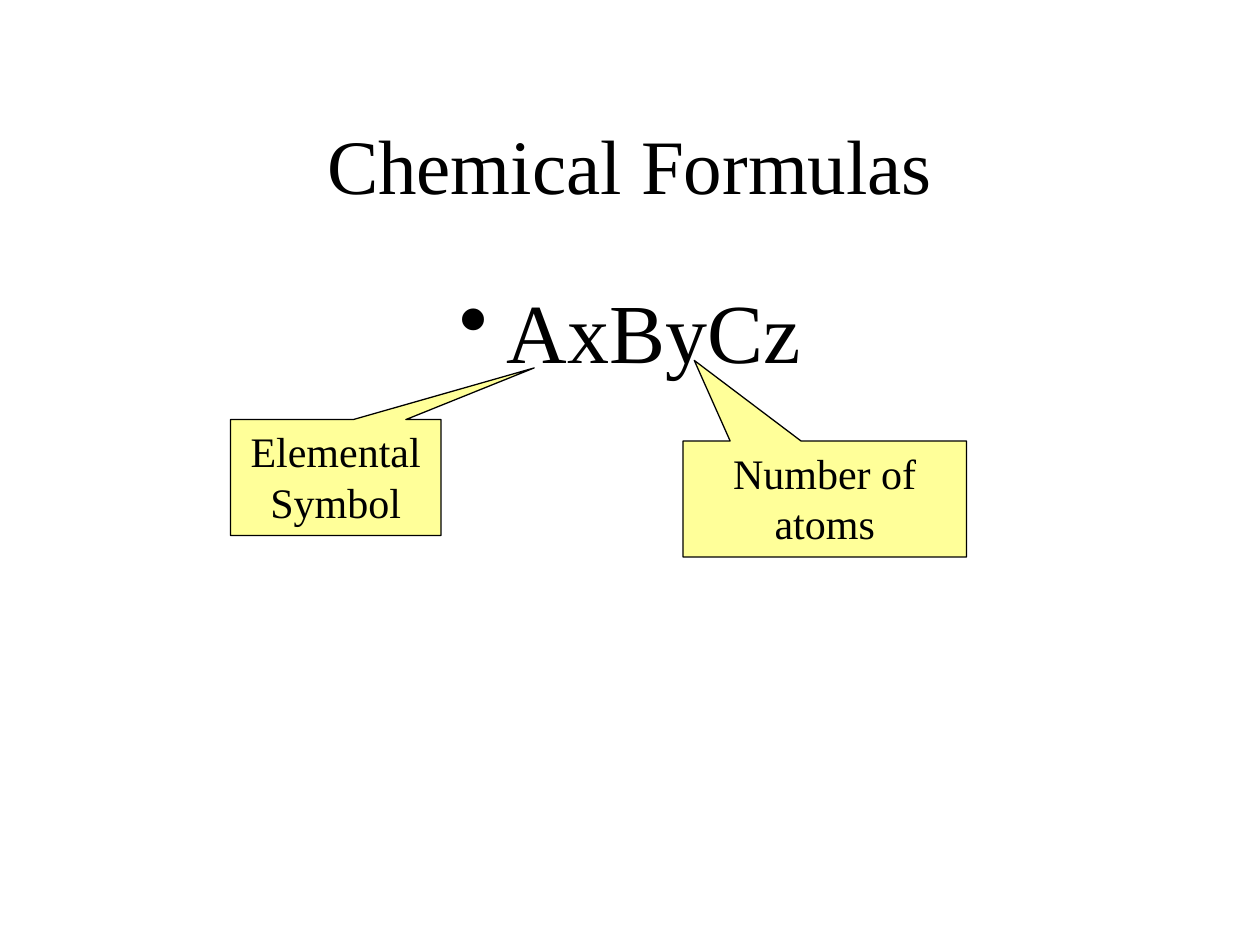
from lxml import etree
from pptx import Presentation
from pptx.dml.color import RGBColor
from pptx.enum import shapes, text
from pptx.oxml.ns import qn
from pptx.util import Inches, Pt

FONT = "Times New Roman"
BLACK, YELLOW = "000000", "FFFF99"

# text, box (left, top, width, height), size
TITLE = ("Chemical Formulas", (0.75, 0.67, 8.5, 1.25), 44)
FORMULA = ("AxByCz", (0.75, 2.17, 8.5, 4.5), 48)

# text, box, tip of the pointer (x, y)
CALLOUTS = [
    ("Elemental Symbol", (1.83, 3.33, 1.67, 0.92), (4.24, 2.92)),
    ("Number of atoms", (5.42, 3.5, 2.25, 0.92), (5.51, 2.86)),
]


def rgb(color):
    return RGBColor.from_string(color)


def write(sp, content, size, anchor):
    tf = sp.text_frame
    tf.word_wrap = True
    tf.vertical_anchor = anchor
    p = tf.paragraphs[0]
    p.text = content
    p.alignment = text.PP_ALIGN.CENTER
    p.font.name = FONT
    p.font.size = Pt(size)
    p.font.color.rgb = rgb(BLACK)
    return p


def add_text(slide, content, box, size, anchor):
    sp = slide.shapes.add_textbox(*map(Inches, box))
    return write(sp, content, size, anchor)


def add_bullet(p, indent):
    pPr = p._p.get_or_add_pPr()
    pPr.set("marL", str(Inches(indent)))
    pPr.set("indent", str(-Inches(indent)))
    bullet = etree.Element(qn("a:buChar"), char="•")
    pPr.find(qn("a:defRPr")).addprevious(bullet)


def add_callout(slide, content, box, tip):
    left, top, width, height = box
    sp = slide.shapes.add_shape(
        shapes.MSO_SHAPE.RECTANGULAR_CALLOUT, *map(Inches, box))
    # The tip is given as a share of the box, measured from its centre
    sp.adjustments[0] = (tip[0] - left) / width - 0.5
    sp.adjustments[1] = (tip[1] - top) / height - 0.5
    sp.shadow.inherit = False
    sp.fill.solid()
    sp.fill.fore_color.rgb = rgb(YELLOW)
    sp.line.color.rgb = rgb(BLACK)
    sp.line.width = Pt(0.75)
    write(sp, content, 24, text.MSO_ANCHOR.TOP)


prs = Presentation()
prs.slide_width, prs.slide_height = Inches(10), Inches(7.5)
slide = prs.slides.add_slide(prs.slide_layouts[6])

add_text(slide, *TITLE, text.MSO_ANCHOR.MIDDLE)
formula = add_text(slide, *FORMULA, text.MSO_ANCHOR.TOP)
formula.space_before = Pt(6)
add_bullet(formula, 0.38)
for callout in CALLOUTS:
    add_callout(slide, *callout)

prs.save("out.pptx")
